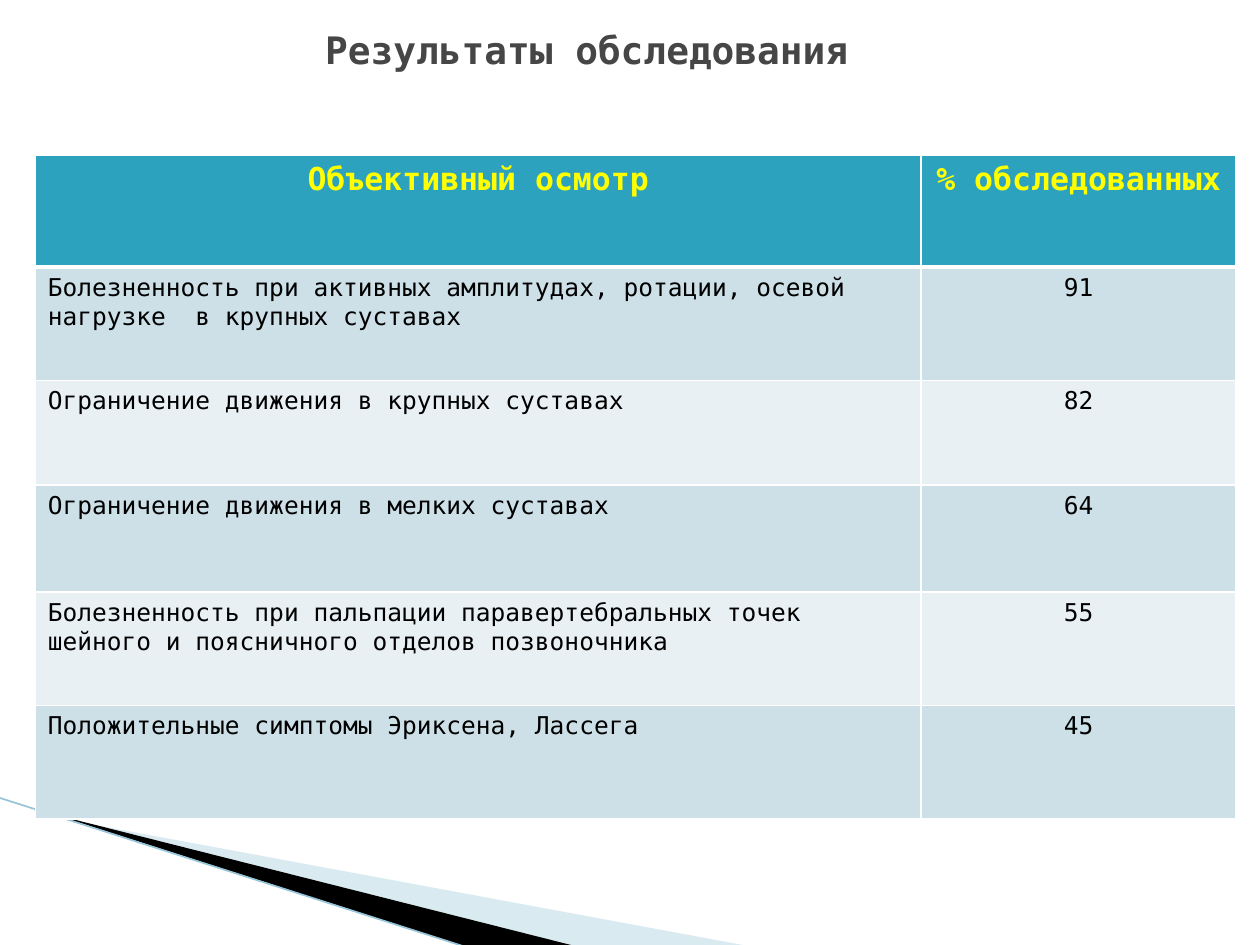
"""Build the slide with the table of examination results."""
from dataclasses import dataclass

from lxml.etree import SubElement
from pptx import Presentation
from pptx.dml.color import RGBColor
from pptx.enum.shapes import MSO_CONNECTOR
from pptx.enum.text import MSO_ANCHOR, PP_ALIGN
from pptx.oxml import parse_xml
from pptx.oxml.ns import nsdecls, qn
from pptx.util import Inches, Pt


@dataclass(frozen=True)
class Theme:
    """Colours and type sizes of the slide."""

    font: str = "DejaVu Sans Mono"
    title_size: float = 21.6
    header_size: float = 18
    body_size: float = 14
    title: str = "464646"
    header_text: str = "FFFF00"
    body_text: str = "000000"
    header_fill: str = "2DA2BF"
    bands: tuple = ("CDE0E8", "E8F0F4")
    border: str = "FFFFFF"
    pale_wedge: str = "A0CBDC"
    dark_wedge: str = "000000"
    edge: str = "97C5D8"


class SlideBuilder:
    """Holds the theme and the current slide."""

    def __init__(self, slide, theme):
        """Keep the slide and its theme."""
        self.slide = slide
        self.theme = theme

    def add_text(self, frame, text, size, color, bold=False, align=PP_ALIGN.LEFT):
        """Put one formatted paragraph in a text frame."""
        paragraph = frame.paragraphs[0]
        paragraph.alignment = align
        run = paragraph.add_run()
        run.text = text
        formats = {"name": self.theme.font, "size": Pt(size), "bold": bold}
        for name, value in formats.items():
            setattr(run.font, name, value)
        run.font.color.rgb = RGBColor.from_string(color)

    def title(self, text, left, top, width, height):
        """Place and fill the title placeholder."""
        heading = self.slide.shapes.title
        box = {"left": left, "top": top, "width": width, "height": height}
        for name, value in box.items():
            setattr(heading, name, Inches(value))
        frame = heading.text_frame
        layout = {"word_wrap": True, "vertical_anchor": MSO_ANCHOR.MIDDLE}
        for name, value in layout.items():
            setattr(frame, name, value)
        self.add_text(frame, text, self.theme.title_size, self.theme.title, bold=True)

    def wedge(self, points, color, opacity=100):
        """Draw a filled polygon without an outline."""
        start, *rest = [(Inches(x), Inches(y)) for x, y in points]
        builder = self.slide.shapes.build_freeform(*start)
        builder.add_line_segments(rest, close=True)
        polygon = builder.convert_to_shape()
        polygon.shadow.inherit = False
        polygon.line.fill.background()
        polygon.fill.solid()
        polygon.fill.fore_color.rgb = RGBColor.from_string(color)
        if opacity < 100:
            tint = polygon._element.spPr.find(qn("a:solidFill"))[0]
            SubElement(tint, qn("a:alpha"), val=str(opacity * 1000))

    def line(self, start, end, color, width):
        """Draw a straight line."""
        ends = [Inches(value) for value in (*start, *end)]
        edge = self.slide.shapes.add_connector(MSO_CONNECTOR.STRAIGHT, *ends)
        edge.line.color.rgb = RGBColor.from_string(color)
        edge.line.width = Pt(width)
        SubElement(edge._element.spPr, qn("a:effectLst"))

    def borders(self, cell, top=1, bottom=1):
        """Give a cell its four borders, widths in points."""
        properties = cell._tc.get_or_add_tcPr()
        widths = {"lnL": 1, "lnR": 1, "lnT": top, "lnB": bottom}
        for position, (tag, width) in enumerate(widths.items()):
            properties.insert(position, parse_xml(
                f'<a:{tag} {nsdecls("a")} w="{Pt(width)}"><a:solidFill>'
                f'<a:srgbClr val="{self.theme.border}"/></a:solidFill></a:{tag}>'))

    def table(self, rows, left, top, widths, heights):
        """Draw a table with a header row and banded body rows."""
        theme = self.theme
        box = [Inches(value) for value in (left, top, sum(widths), sum(heights))]
        grid = self.slide.shapes.add_table(len(rows), len(widths), *box).table
        for column, width in zip(grid.columns, widths):
            column.width = Inches(width)
        for index, (row, height) in enumerate(zip(rows, heights)):
            grid.rows[index].height = Inches(height)
            header = index == 0
            fill = theme.header_fill if header else theme.bands[(index - 1) % 2]
            size = theme.header_size if header else theme.body_size
            color = theme.header_text if header else theme.body_text
            for position, text in enumerate(row):
                cell = grid.cell(index, position)
                cell.fill.solid()
                cell.fill.fore_color.rgb = RGBColor.from_string(fill)
                self.borders(cell, top=3 if index == 1 else 1, bottom=3 if header else 1)
                centred = header or position > 0
                align = PP_ALIGN.CENTER if centred else PP_ALIGN.LEFT
                self.add_text(cell.text_frame, text, size, color, header, align)


FINDINGS = [
    ("Объективный осмотр", "% обследованных"),
    ("Болезненность при активных амплитудах, ротации, осевой нагрузке  в крупных суставах", "91"),
    ("Ограничение движения в крупных суставах", "82"),
    ("Ограничение движения в мелких суставах", "64"),
    ("Болезненность при пальпации паравертебральных точек шейного и поясничного отделов позвоночника", "55"),
    ("Положительные симптомы Эриксена, Лассега", "45"),
]


def main():
    """Build and save the presentation."""
    presentation = Presentation()
    presentation.slide_width = Inches(10)
    presentation.slide_height = Inches(7.5)
    theme = Theme()
    page = SlideBuilder(presentation.slides.add_slide(presentation.slide_layouts[5]), theme)
    page.wedge([(0.55, 6.51), (5.95, 7.51), (4.56, 7.51), (0.55, 6.5)], theme.pale_wedge, opacity=40)
    page.wedge([(0.53, 6.49), (4.57, 7.51), (3.72, 7.52), (0.54, 6.5)], theme.dark_wedge)
    page.line((-0.01, 6.33), (3.71, 7.52), theme.edge, 0.95)
    page.table(FINDINGS, 0.28, 1.23, widths=(7.03, 2.5), heights=(0.89, 0.9, 0.83, 0.85, 0.9, 0.9))
    page.title("Результаты обследования", 2.48, 0.21, 5.08, 0.37)
    presentation.save("out.pptx")


if __name__ == "__main__":
    main()
